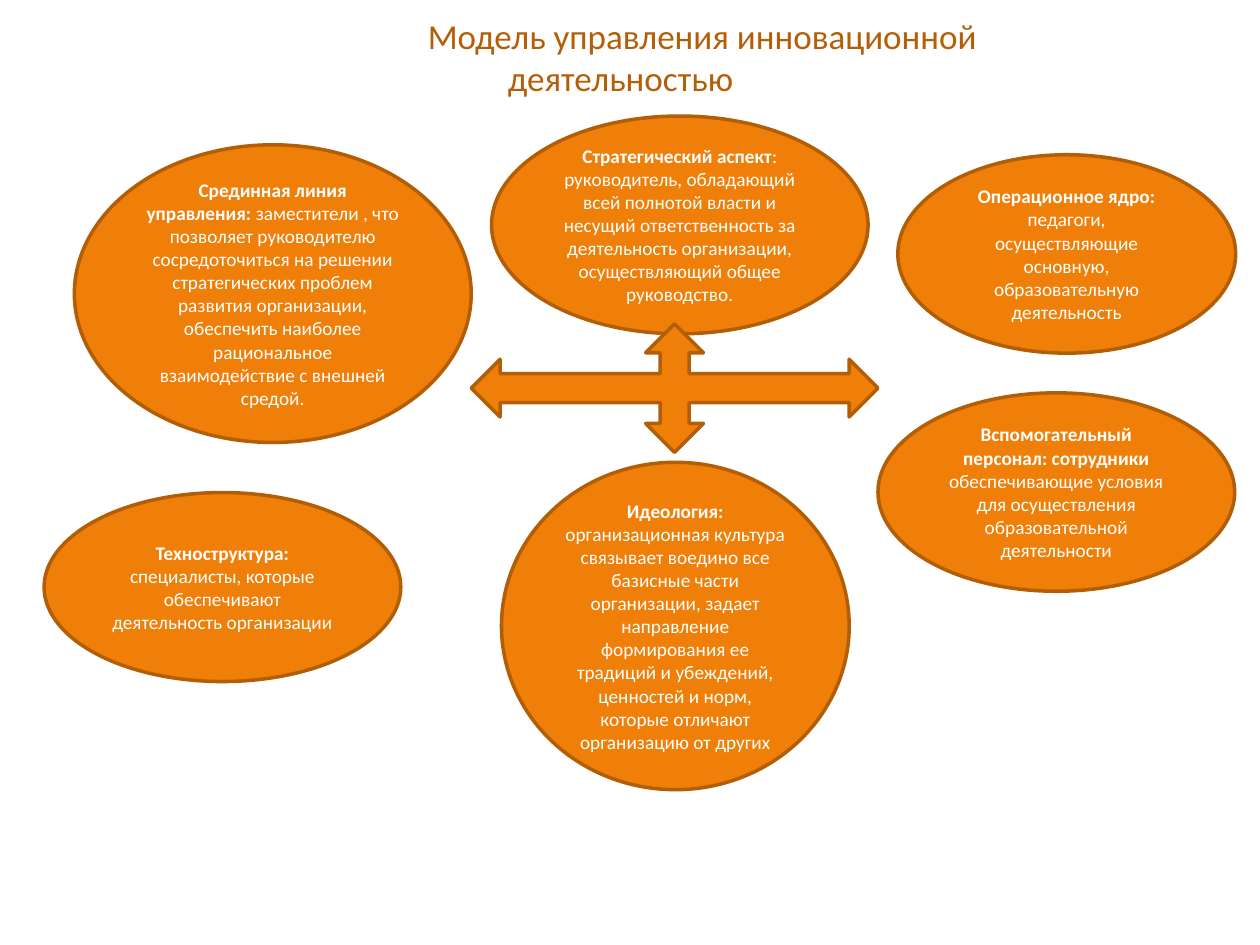
"""Build a slide showing a model of innovation management."""
from pptx import Presentation
from pptx import util as u
from pptx.dml.color import RGBColor
from pptx.enum import shapes, text

ORANGE = RGBColor(0xF0, 0x7F, 0x09)
BROWN = RGBColor(0xB2, 0x5E, 0x07)
TITLE_BROWN = RGBColor(0xB4, 0x5F, 0x07)
WHITE = RGBColor(0xFF, 0xFF, 0xFF)

ASPECTS = [
    ((9.91, 2.34, 7.59, 4.39), "Стратегический аспект",
     ": руководитель, обладающий всей полнотой власти и несущий ответственность "
     "за деятельность организации, осуществляющий общее руководство."),
    ((1.5, 2.92, 8, 6), "Срединная линия управления:",
     " заместители , что позволяет руководителю сосредоточиться на решении "
     "стратегических проблем развития организации, обеспечить наиболее "
     "рациональное взаимодействие с внешней средой."),
    ((18.1, 3.12, 6.81, 4), "Операционное ядро:",
     " педагоги, осуществляющие основную, образовательную деятельность"),
    ((0.89, 9.93, 7.19, 3.81), "Техноструктура:",
     " специалисты, которые обеспечивают деятельность организации"),
    ((17.7, 7.92, 7.19, 4), "Вспомогательный персонал: сотрудники",
     " обеспечивающие условия для осуществления образовательной деятельности"),
    ((10.11, 9.32, 7.01, 6.6), "Идеология:",
     " организационная культура связывает воедино все базисные части "
     "организации, задает направление формирования ее традиций и убеждений, "
     "ценностей и норм, которые отличают организацию от других"),
]


class ModelSlide:
    """Hold the style and the current slide."""

    font_name = "Calibri"
    title_size = u.Pt(20)
    body_size = u.Pt(11)
    line_width = u.Pt(2)

    def __init__(self, slide):
        self.slide = slide

    def style_paragraph(self, paragraph, size, color):
        paragraph.alignment = text.PP_ALIGN.CENTER
        paragraph.font.name = self.font_name
        paragraph.font.size = size
        paragraph.font.color.rgb = color

    def title(self, box, wording, first_line_indent):
        shape = self.slide.shapes.add_textbox(*map(u.Cm, box))
        frame = shape.text_frame
        frame.word_wrap = True
        frame.vertical_anchor = text.MSO_ANCHOR.MIDDLE
        paragraph = frame.paragraphs[0]
        paragraph.text = wording
        properties = paragraph._p.get_or_add_pPr()
        properties.set("marL", "0")
        properties.set("indent", str(u.Cm(first_line_indent)))
        self.style_paragraph(paragraph, self.title_size, TITLE_BROWN)

    def figure(self, kind, box):
        shape = self.slide.shapes.add_shape(kind, *map(u.Cm, box))
        shape.shadow.inherit = False
        shape.fill.solid()
        shape.fill.fore_color.rgb = ORANGE
        shape.line.color.rgb = BROWN
        shape.line.width = self.line_width
        return shape

    def aspect(self, box, heading, description):
        frame = self.figure(shapes.MSO_SHAPE.OVAL, box).text_frame
        frame.word_wrap = True
        frame.vertical_anchor = text.MSO_ANCHOR.MIDDLE
        paragraph = frame.paragraphs[0]
        self.style_paragraph(paragraph, self.body_size, WHITE)
        for wording, bold in ((heading, True), (description, False)):
            run = paragraph.add_run()
            run.text = wording
            run.font.bold = bold

    def four_way_arrow(self, box):
        self.figure(shapes.MSO_SHAPE.QUAD_ARROW, box)


def main():
    presentation = Presentation()
    presentation.slide_width = u.Cm(25.4)
    presentation.slide_height = u.Cm(19.05)
    model = ModelSlide(presentation.slides.add_slide(presentation.slide_layouts[6]))
    model.title((3.71, 0.13, 17.6, 2), "Модель управления инновационной деятельностью", 3.3)
    for box, heading, description in ASPECTS:
        model.aspect(box, heading, description)
    model.four_way_arrow((9.5, 6.53, 8.2, 2.59))
    presentation.save("out.pptx")


if __name__ == "__main__":
    main()
